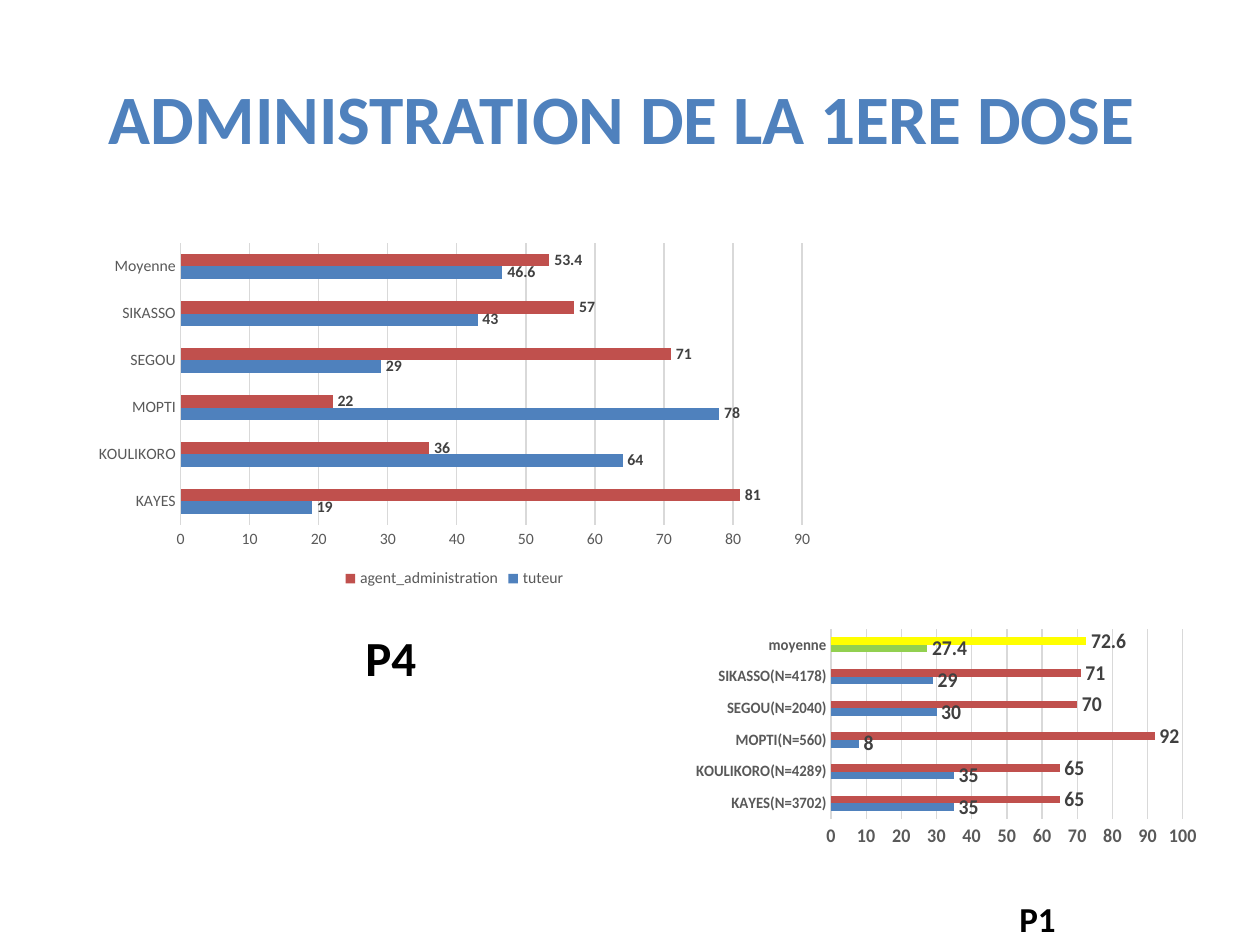
from pptx import Presentation
from pptx import util as u
from pptx.chart.data import CategoryChartData
from pptx.dml.color import RGBColor
from pptx.enum import chart as charts, text
from pptx.oxml import parse_xml

PX = 914400 / 126
FONT = "Calibri"
COLOURS = {
    "title": "4F81BD", "tutor": "4F81BD", "agent": "C0504D",
    "tutor_mean": "92D050", "agent_mean": "FFFF00", "axis": "595959",
    "grid": "D9D9D9", "label": "404040", "caption": "000000",
}
REGIONS = ["KAYES", "KOULIKORO", "MOPTI", "SEGOU", "SIKASSO"]
SAMPLES = [3702, 4289, 560, 2040, 4178]


def px(*lengths):
    """Turn pixel lengths into EMU."""
    return [u.Emu(round(length * PX)) for length in lengths]


def colour(name):
    """Look up a named colour."""
    return RGBColor.from_string(COLOURS[name])


def style_font(font, size, name, bold=False):
    """Set face, size, colour and weight of a font."""
    font.name, font.size, font.bold = FONT, u.Pt(size), bold
    font.color.rgb = colour(name)


def set_title(page):
    """Place and format the slide title."""
    title = page.shapes.title
    title.left, title.top, title.width, title.height = px(63, 38, 1134, 157)
    frame = title.text_frame
    frame.text = "ADMINISTRATION DE LA 1ERE DOSE "
    frame.vertical_anchor = text.MSO_ANCHOR.MIDDLE
    para = frame.paragraphs[0]
    para.alignment = text.PP_ALIGN.CENTER
    style_font(para.runs[0].font, 39.6, "title", True)


def add_caption(page, words, place, size):
    """Add a bold caption for a chart."""
    box = page.shapes.add_textbox(*px(*place))
    frame = box.text_frame
    frame.word_wrap = True
    frame.auto_size = text.MSO_AUTO_SIZE.SHAPE_TO_FIT_TEXT
    frame.text = words
    para = frame.paragraphs[0]
    para.line_spacing, para.space_after = 1.07, u.Pt(8)
    style_font(para.runs[0].font, size, "caption", True)


def style_axes(chart, maximum, sizes, bold):
    """Format the category axis, the value axis and its grid."""
    for axis, size in zip((chart.category_axis, chart.value_axis), sizes):
        axis.major_tick_mark = axis.minor_tick_mark = charts.XL_TICK_MARK.NONE
        style_font(axis.tick_labels.font, size, "axis", bold)
    values = chart.value_axis
    values.minimum_scale, values.maximum_scale, values.major_unit = 0, maximum, 10
    values.has_major_gridlines = True
    values.format.line.fill.background()
    for line in (chart.category_axis.format.line, values.major_gridlines.format.line):
        line.color.rgb = colour("grid")
        line.width = u.Pt(0.75)


def style_series(chart, label_size):
    """Colour the bars and show their values."""
    for series, name in zip(chart.plots[0].series, ("tutor", "agent")):
        series.format.fill.solid()
        series.format.fill.fore_color.rgb = colour(name)
        series.invert_if_negative = False
        labels = series.data_labels
        labels.show_value = True
        labels.position = charts.XL_LABEL_POSITION.OUTSIDE_END
        style_font(labels.font, label_size, "label", True)


def add_bars(page, place, categories, series, gap, maximum, sizes, label_size, bold=False):
    """Add a clustered bar chart and return it."""
    data = CategoryChartData()
    data.categories = categories
    for name, values in series.items():
        data.add_series(name, values)
    kind = charts.XL_CHART_TYPE.BAR_CLUSTERED
    chart = page.shapes.add_chart(kind, *px(*place), data).chart
    chart.has_title = chart.has_legend = False
    style_font(chart.font, 10, "caption")
    chart.plots[0].gap_width = gap
    chart.plots[0].vary_by_categories = False
    style_axes(chart, maximum, sizes, bold)
    style_series(chart, label_size)
    return chart


def add_legend(chart):
    """Put the legend below the plot."""
    chart.has_legend = True
    chart.legend.position = charts.XL_LEGEND_POSITION.BOTTOM
    chart.legend.include_in_layout = False
    style_font(chart.legend.font, 9, "axis")


def highlight_mean(chart):
    """Give the last bar of each series its own colour."""
    for series, name in zip(chart.plots[0].series, ("tutor_mean", "agent_mean")):
        fill = series.points[len(series.values) - 1].format.fill
        fill.solid()
        fill.fore_color.rgb = colour(name)


def set_plot_area(chart, **fractions):
    """Fix the inner plot area as fractions of the chart."""
    area = chart.plots[0]._element.getparent()
    for old in area.findall("{*}layout"):
        area.remove(old)
    sizes = "".join(f'<c:{key} val="{value}"/>' for key, value in fractions.items())
    area.insert(0, parse_xml(
        '<c:layout xmlns:c="http://schemas.openxmlformats.org/drawingml/2006/chart">'
        '<c:manualLayout><c:layoutTarget val="inner"/><c:xMode val="edge"/>'
        f'<c:yMode val="edge"/>{sizes}</c:manualLayout></c:layout>'))


def main():
    """Build the slide and save it."""
    deck = Presentation()
    deck.slide_width, deck.slide_height = px(1260, 945)
    page = deck.slides.add_slide(deck.slide_layouts[5])
    set_title(page)

    sampled = [f"{region}(N={count})" for region, count in zip(REGIONS, SAMPLES)]
    first_pass = add_bars(
        page, (696, 621, 501, 268), sampled + ["moyenne"],
        {"tuteur": [35, 35, 8, 30, 29, 27.4],
         "agent d'administration": [65, 65, 92, 70, 71, 72.6]},
        219, 100, (9, 11), 12, bold=True)
    highlight_mean(first_pass)
    set_plot_area(first_pass, x=0.23, y=0.03, w=0.75, h=0.71)

    fourth_pass = add_bars(
        page, (84, 236, 741, 357), REGIONS + ["Moyenne"],
        {"tuteur": [19, 64, 78, 29, 43, 46.6],
         "agent_administration": [81, 36, 22, 71, 57, 53.4]},
        182, 90, (9, 9), 9)
    add_legend(fourth_pass)

    add_caption(page, "P4", (353, 617, 126, 73), 28)
    add_caption(page, "P1", (1007, 888, 87, 57), 20)
    deck.save("out.pptx")


if __name__ == "__main__":
    main()
